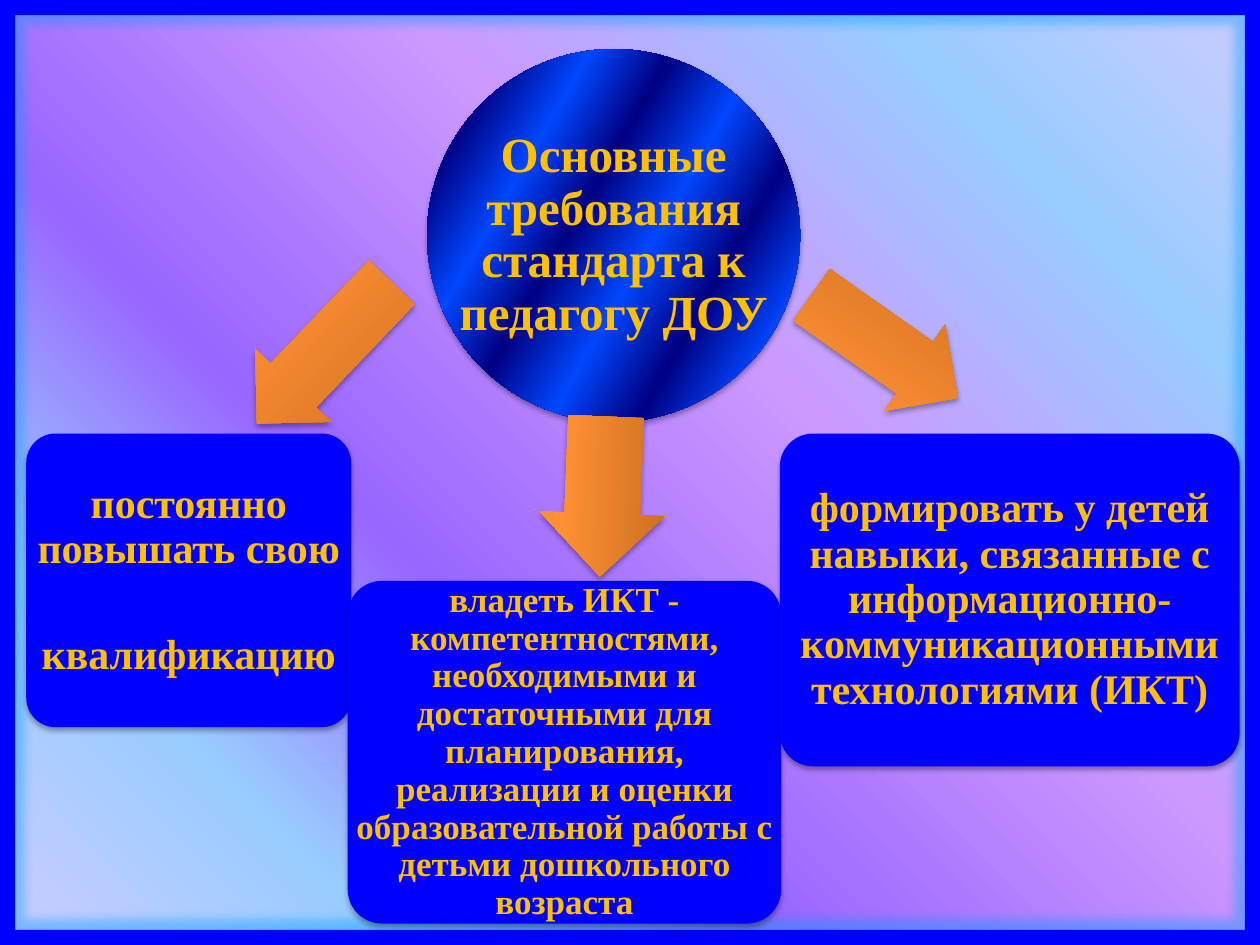
import pptx
import pptx.dml.color
import pptx.enum.shapes
import pptx.enum.text
import pptx.oxml
import pptx.oxml.ns
import pptx.util
from lxml import etree

Cm = pptx.util.Cm
RGBColor = pptx.dml.color.RGBColor
SHAPE = pptx.enum.shapes.MSO_SHAPE
qn = pptx.oxml.ns.qn

BLUE = RGBColor(0x00, 0x00, 0xFF)
GLOW = RGBColor(0x00, 0x99, 0xFF)
GOLD = RGBColor(0xFF, 0xC0, 0x00)
BLACK = RGBColor(0x00, 0x00, 0x00)
NAVY = RGBColor(0x00, 0x00, 0x82)
AZURE = RGBColor(0x00, 0x47, 0xFF)
LAVENDER = RGBColor(0xCC, 0xCC, 0xFF)
SKY = RGBColor(0x99, 0xCC, 0xFF)
VIOLET = RGBColor(0x99, 0x66, 0xFF)
LILAC = RGBColor(0xCC, 0x99, 0xFF)
RUST = RGBColor(0xCC, 0x6E, 0x20)
ORANGE = RGBColor(0xFF, 0x90, 0x34)
LIGHT_ORANGE = RGBColor(0xFF, 0x91, 0x36)

BACKDROP = [(0, LAVENDER), (18, SKY), (36, VIOLET), (61, LILAC), (82, SKY), (100, LAVENDER)]
STRIPES = list(zip((0, 13, 28, 43, 58, 72, 87, 100), (NAVY, AZURE) * 4))
ARROW_SHADES = [(0, RUST), (80, ORANGE), (100, LIGHT_ORANGE)]


class RequirementsSlide:
    font = "Times New Roman"

    def __init__(self, slide):
        self.slide = slide

    def gradient(self, fill, owner, stops, angle):
        """Fill with any number of stops; the angle runs clockwise."""
        fill.gradient()
        fill.gradient_angle = 360 - angle
        stop_list = owner.find(".//" + qn("a:gsLst"))
        for stop in list(stop_list):
            stop_list.remove(stop)
        for position, color in stops:
            stop = etree.SubElement(stop_list, qn("a:gs"), pos=str(position * 1000))
            etree.SubElement(stop, qn("a:srgbClr"), val=str(color))

    def effect(self, shape, kind, color, opacity, **settings):
        effects = shape._element.spPr.find(qn("a:effectLst"))
        effect = etree.SubElement(effects, qn(kind), **settings)
        tint = etree.SubElement(effect, qn("a:srgbClr"), val=str(color))
        etree.SubElement(tint, qn("a:alpha"), val=str(opacity * 1000))

    def background(self, stops, angle):
        self.gradient(self.slide.background.fill, self.slide.element, stops, angle)

    def shape(self, preset, place, adjustments=(), color=BLUE, stops=None, angle=0, shadow=True):
        shape = self.slide.shapes.add_shape(preset, *map(Cm, place))
        for index, value in enumerate(adjustments):
            shape.adjustments[index] = value
        shape.line.fill.background()
        shape.shadow.inherit = False
        if stops:
            self.gradient(shape.fill, shape._element, stops, angle)
        else:
            shape.fill.solid()
            shape.fill.fore_color.rgb = color
        if shadow:
            self.effect(shape, "a:outerShdw", BLACK, 35, blurRad="40000", dist="23000",
                        dir="5400000", rotWithShape="0")
        return shape

    def frame(self, place):
        frame = self.shape(SHAPE.FRAME, place, [0.016], shadow=False)
        self.effect(frame, "a:glow", GLOW, 40, rad="139700")

    def arrow(self, place, rotation):
        arrow = self.shape(SHAPE.LEFT_ARROW, place, [0.6, 0.5], stops=ARROW_SHADES, angle=270)
        arrow.rotation = rotation

    def label(self, place, text, size, inset):
        frame = self.slide.shapes.add_textbox(*map(Cm, place)).text_frame
        frame.word_wrap = True
        frame.vertical_anchor = pptx.enum.text.MSO_ANCHOR.MIDDLE
        frame.margin_left = frame.margin_right = Cm(inset)
        frame.margin_top = frame.margin_bottom = Cm(inset)
        frame.text = text
        for paragraph in frame.paragraphs:
            paragraph.alignment = pptx.enum.text.PP_ALIGN.CENTER
            paragraph.line_spacing = 0.9
            paragraph.space_after = pptx.util.Pt(size * 0.35)
            for run in paragraph.runs:
                run.font.name = self.font
                run.font.size = pptx.util.Pt(size)
                run.font.bold = True
                run.font.color.rgb = GOLD

    def circle(self, place, text):
        self.shape(SHAPE.OVAL, place, stops=STRIPES, angle=210)
        self.label(place, text, 28, 0.05)

    def card(self, place, text, size, inset):
        self.shape(SHAPE.ROUNDED_RECTANGLE, place, [0.1])
        self.label(place, text, size, inset)


def main():
    deck = pptx.Presentation()
    deck.slide_width, deck.slide_height = Cm(25.4), Cm(19.05)
    page = RequirementsSlide(deck.slides.add_slide(deck.slide_layouts[6]))

    # Backdrop and border
    page.background(BACKDROP, 315)
    page.frame((0, 0, 25.4, 19.05))

    # Central topic
    page.circle((8.61, 0.99, 7.52, 7.52), "Основные требования стандарта к педагогу ДОУ")

    # Requirements, each with the arrow that leads to it
    requirements = [
        ((4.57, 6.05, 3.94, 2.13), 313.7, (0.53, 8.74, 6.55, 5.92),
         "постоянно повышать свою  \nквалификацию", 24, 0.13),
        ((10.54, 8.74, 3.23, 2.54), 272.3, (7.01, 11.71, 8.74, 6.91),
         "владеть ИКТ - компетентностями, необходимыми и достаточными для планирования, "
         "реализации и оценки образовательной работы с детьми дошкольного возраста", 20, 0.1),
        ((16.03, 5.92, 3.61, 2.13), 215.2, (15.72, 8.74, 9.27, 6.71),
         "формировать у детей навыки, связанные с "
         "информационно-коммуникационными технологиями (ИКТ)", 24, 0.13),
    ]
    for arrow_place, rotation, card_place, text, size, inset in requirements:
        page.arrow(arrow_place, rotation)
        page.card(card_place, text, size, inset)

    deck.save("out.pptx")


if __name__ == "__main__":
    main()
